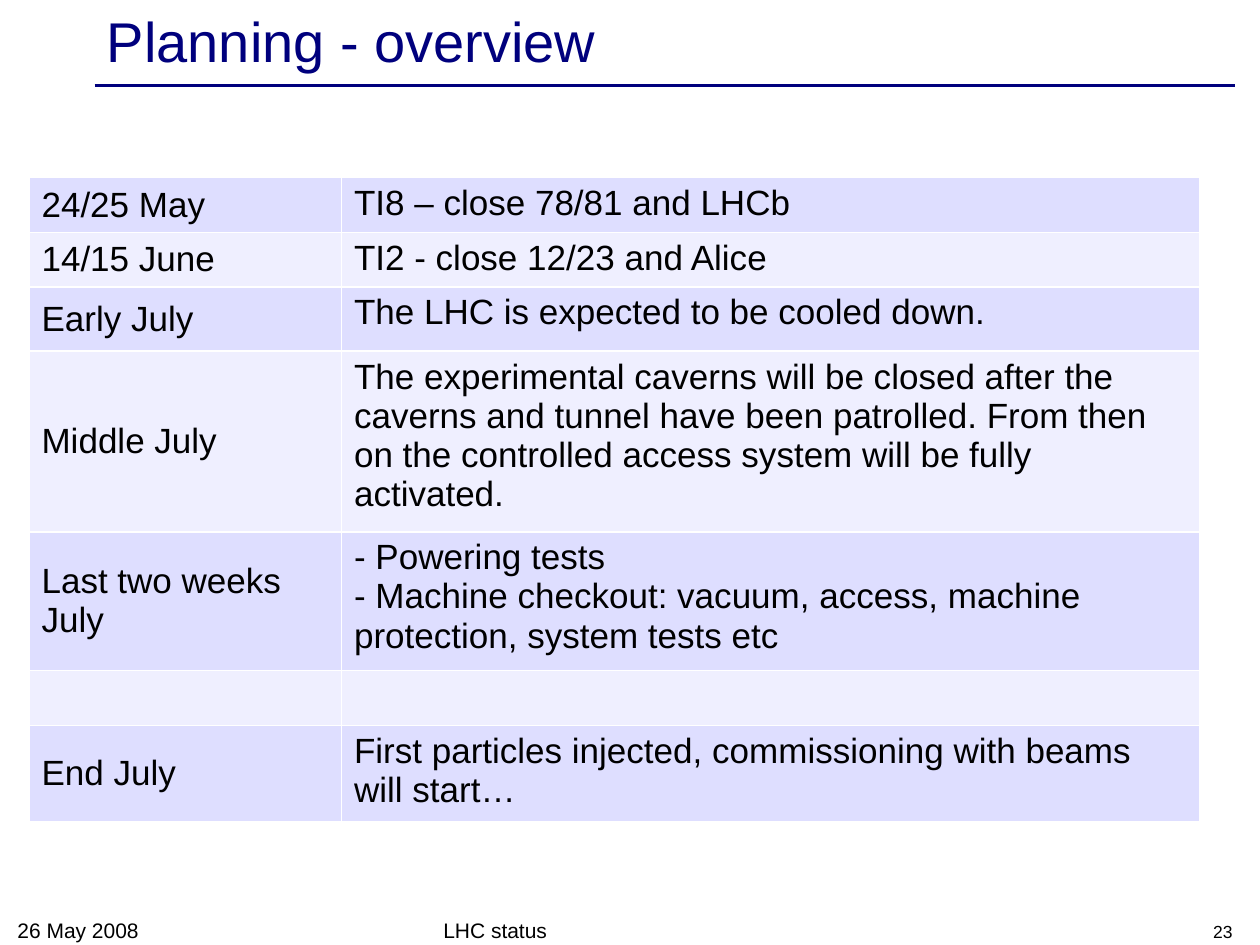
import pptx
import pptx.dml.color
import pptx.enum.shapes
import pptx.enum.text
import pptx.oxml
import pptx.oxml.ns
import pptx.util

RGB = pptx.dml.color.RGBColor
NAVY = RGB(0x00, 0x00, 0x7D)
BLACK = RGB(0x00, 0x00, 0x00)
WHITE = RGB(0xFF, 0xFF, 0xFF)
BANDS = RGB(0xDE, 0xDE, 0xFF), RGB(0xEF, 0xEF, 0xFF)

ALIGN = pptx.enum.text.PP_ALIGN
ANCHOR = pptx.enum.text.MSO_ANCHOR

# Row height in percent, date, tasks
PLAN = [
    (5.73, "24/25 May", "TI8 – close 78/81 and LHCb"),
    (5.73, "14/15 June", "TI2 - close 12/23 and Alice"),
    (6.8, "Early July", "The LHC is expected to be cooled down."),
    (14.53, "Middle July",
     "The experimental caverns will be closed after the caverns and tunnel "
     "have been patrolled. From then on the controlled access system will be "
     "fully activated."),
    (5.73, "Last two weeks July",
     "- Powering tests\n- Machine checkout: vacuum, access, machine "
     "protection, system tests etc"),
    (5.73, "", ""),
    (5.73, "End July",
     "First particles injected, commissioning with beams will start…"),
]


class Deck:
    """Holds the style and current slide; lengths are percent of its size."""

    def __init__(self, face="Arial"):
        self.face = face
        self.show = pptx.Presentation()
        self.show.slide_width = pptx.util.Inches(10)
        self.show.slide_height = pptx.util.Inches(7.5)
        self.slide = self.show.slides.add_slide(self.show.slide_layouts[6])

    def across(self, share):
        return round(self.show.slide_width * share / 100)

    def down(self, share):
        return round(self.show.slide_height * share / 100)

    def box(self, left, top, width, height):
        return (self.across(left), self.down(top),
                self.across(width), self.down(height))

    def fill_text(self, frame, text, size, color=BLACK, align=ALIGN.LEFT):
        frame.text = text
        for para in frame.paragraphs:
            para.alignment = align
            para.font.name = self.face
            para.font.size = pptx.util.Pt(size)
            para.font.color.rgb = color

    def label(self, area, text, size, color=BLACK, align=ALIGN.LEFT,
              anchor=ANCHOR.BOTTOM):
        frame = self.slide.shapes.add_textbox(*self.box(*area)).text_frame
        frame.word_wrap = True
        frame.vertical_anchor = anchor
        self.fill_text(frame, text, size, color, align)

    def rule(self, left, right, top, color, width):
        line = self.slide.shapes.add_connector(
            pptx.enum.shapes.MSO_CONNECTOR.STRAIGHT,
            self.across(left), self.down(top),
            self.across(right), self.down(top))
        line.line.color.rgb = color
        line.line.width = pptx.util.Pt(width)
        line._element.spPr.append(
            pptx.oxml.parse_xml(f"<a:effectLst {pptx.oxml.ns.nsdecls('a')}/>"))

    def edge(self, cell, color, width):
        """Draw all four borders of a cell; they must precede its fill."""
        props = cell._tc.get_or_add_tcPr()
        for spot, side in enumerate("LRTB"):
            props.insert(spot, pptx.oxml.parse_xml(
                f"<a:ln{side} {pptx.oxml.ns.nsdecls('a')} "
                f'w="{pptx.util.Pt(width)}"><a:solidFill>'
                f'<a:srgbClr val="{color}"/></a:solidFill></a:ln{side}>'))

    def table(self, left, top, widths, plan, size):
        high = sum(row[0] for row in plan)
        grid = self.slide.shapes.add_table(
            len(plan), len(widths),
            *self.box(left, top, sum(widths), high)).table
        for column, width in zip(grid.columns, widths):
            column.width = self.across(width)
        for index, (height, *texts) in enumerate(plan):
            grid.rows[index].height = self.down(height)
            for spot, text in enumerate(texts):
                cell = grid.cell(index, spot)
                cell.fill.solid()
                cell.fill.fore_color.rgb = BANDS[index % 2]
                cell.vertical_anchor = ANCHOR.TOP if spot else ANCHOR.MIDDLE
                self.edge(cell, WHITE, 1)
                self.fill_text(cell.text_frame, text, size)


def main():
    deck = Deck()
    deck.rule(7.5, 98, 9.07, NAVY, 2)
    deck.label((7.5, 0.4, 90, 7.6), "Planning - overview", 32, NAVY,
               anchor=ANCHOR.MIDDLE)
    deck.label((34.2, 96.6, 31.7, 3.8), "LHC status", 12)
    deck.label((75.5, 96.6, 23.3, 3.8), "23", 10, align=ALIGN.RIGHT)
    deck.label((0.4, 96.6, 23.3, 3.8), "26 May 2008", 12)
    deck.table(2.3, 18.8, (24.8, 68.1), PLAN, 20)
    deck.show.save("out.pptx")


if __name__ == "__main__":
    main()
